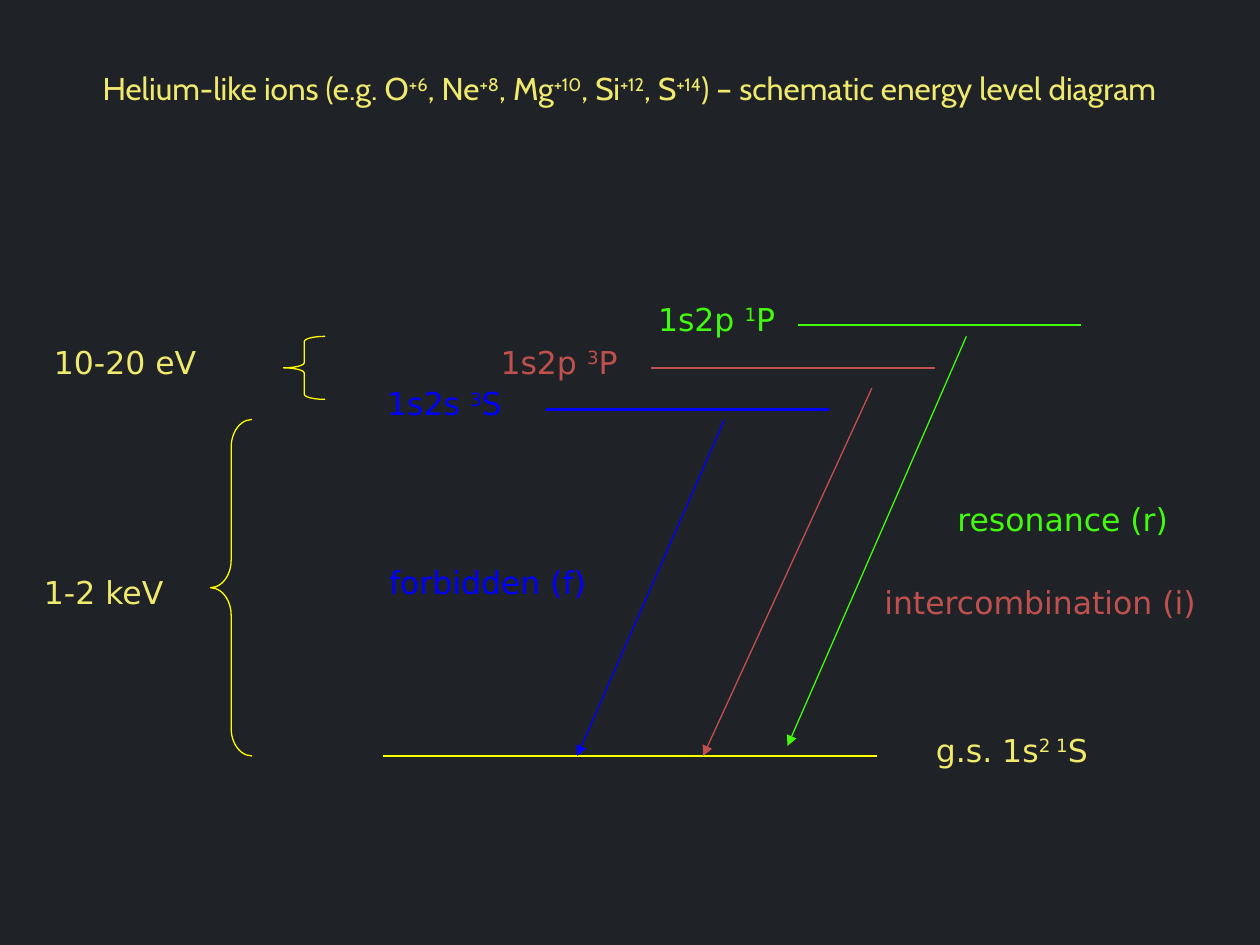
from lxml.etree import SubElement
from pptx import Presentation
from pptx.dml.color import RGBColor
from pptx.enum.shapes import MSO_CONNECTOR, MSO_SHAPE
from pptx.enum.text import PP_ALIGN
from pptx.oxml.ns import qn
from pptx.util import Inches, Pt

BACKGROUND = RGBColor(0x1F, 0x22, 0x26)
PALE = RGBColor(0xEF, 0xE9, 0x6D)
YELLOW = RGBColor(0xFF, 0xFF, 0x00)
BLUE = RGBColor(0x00, 0x00, 0xFF)
RED = RGBColor(0xC0, 0x50, 0x4D)
GREEN = RGBColor(0x41, 0xFA, 0x0E)

LEFT, CENTER, RIGHT = PP_ALIGN.LEFT, PP_ALIGN.CENTER, PP_ALIGN.RIGHT
GROUND_Y = 6
LEVEL_WIDTH = 2.25
LABEL_HEIGHT = 0.4

TITLE = ("Helium-like ions (e.g. O^+6^, Ne^+8^, Mg^+10^, Si^+12^, S^+14^)"
         " – schematic energy level diagram")
LEVELS = [
    (3.04, GROUND_Y, 3.92, YELLOW),
    (4.33, 3.25, LEVEL_WIDTH, BLUE),
    (5.17, 2.92, LEVEL_WIDTH, RED),
    (6.33, 2.58, LEVEL_WIDTH, GREEN),
]
TRANSITIONS = [
    ((7.67, 2.67), (6.25, 5.92), GREEN),
    ((5.75, 3.33), (4.58, GROUND_Y), BLUE),
    ((6.92, 3.08), (5.58, GROUND_Y), RED),
]
LABELS = [
    ("g.s. 1s^2 1^S", 7.33, 5.75, 2.17, PALE, LEFT),
    ("1s2s ^3^S", 2.94, 3, 1.14, BLUE, RIGHT),
    ("1s2p ^3^P", 3.75, 2.67, 1.25, RED, RIGHT),
    ("1s2p ^1^P", 5, 2.33, 1.25, GREEN, RIGHT),
    ("resonance (r)", 7.5, 3.92, 2.33, GREEN, LEFT),
    ("intercombination (i)", 6.92, 4.58, 2.75, RED, LEFT),
    ("forbidden (f)", 1.83, 4.42, 2.92, BLUE, RIGHT),
    ("10-20 eV", 0.33, 2.67, 1.5, PALE, LEFT),
    ("1-2 keV", 0.25, 4.5, 1.25, PALE, LEFT),
]
BRACES = [
    (1.67, 3.33, 0.33, 2.67, 0.667),
    (2.25, 2.67, 0.33, 0.5, 0.125),
]


def add_line(slide, start, end, color, width, arrow=False):
    line = slide.shapes.add_connector(
        MSO_CONNECTOR.STRAIGHT, *(Inches(v) for v in (*start, *end)))
    line.line.color.rgb = color
    line.line.width = Pt(width)
    if arrow:
        SubElement(line.line._get_or_add_ln(), qn("a:tailEnd"), type="triangle")
    SubElement(line._element.spPr, qn("a:effectLst"))


def add_text(slide, marked_text, left, top, width, color, align,
             height=LABEL_HEIGHT, font="DejaVu Sans"):
    box = slide.shapes.add_textbox(*(Inches(v) for v in (left, top, width, height)))
    box.text_frame.word_wrap = True
    paragraph = box.text_frame.paragraphs[0]
    paragraph.alignment = align
    paragraph.font.name = font
    paragraph.font.size = Pt(18)
    paragraph.font.color.rgb = color
    for index, part in enumerate(marked_text.split("^")):
        run = paragraph.add_run()
        run.text = part
        if index % 2:
            run._r.get_or_add_rPr().set("baseline", "30000")


def add_brace(slide, left, top, width, height, curve):
    brace = slide.shapes.add_shape(
        MSO_SHAPE.LEFT_BRACE, *(Inches(v) for v in (left, top, width, height)))
    brace.adjustments[0] = curve
    brace.adjustments[1] = 0.5
    brace.shadow.inherit = False
    brace.fill.background()
    brace.line.color.rgb = YELLOW
    brace.line.width = Pt(0.75)


def main():
    presentation = Presentation()
    presentation.slide_width = Inches(10)
    presentation.slide_height = Inches(7.5)
    slide = presentation.slides.add_slide(presentation.slide_layouts[6])
    slide.background.fill.solid()
    slide.background.fill.fore_color.rgb = BACKGROUND

    for left, y, width, color in LEVELS:
        add_line(slide, (left, y), (left + width, y), color, 1.25)
    for start, end, color in TRANSITIONS:
        add_line(slide, start, end, color, 0.75, arrow=True)
    for label in LABELS:
        add_text(slide, *label)
    for brace in BRACES:
        add_brace(slide, *brace)
    add_text(slide, TITLE, 0.62, 0.5, 8.75, PALE, CENTER, height=0.9, font="Cabin")

    presentation.save("out.pptx")


if __name__ == "__main__":
    main()
